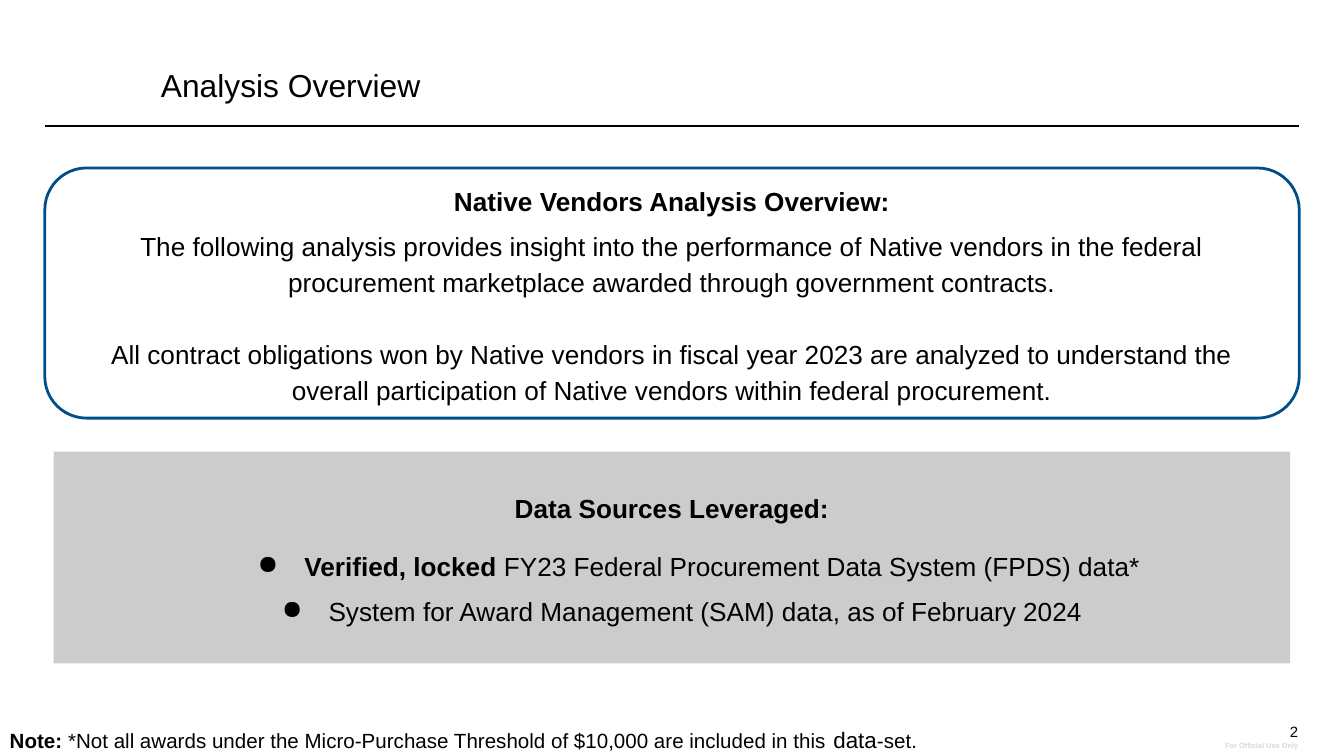
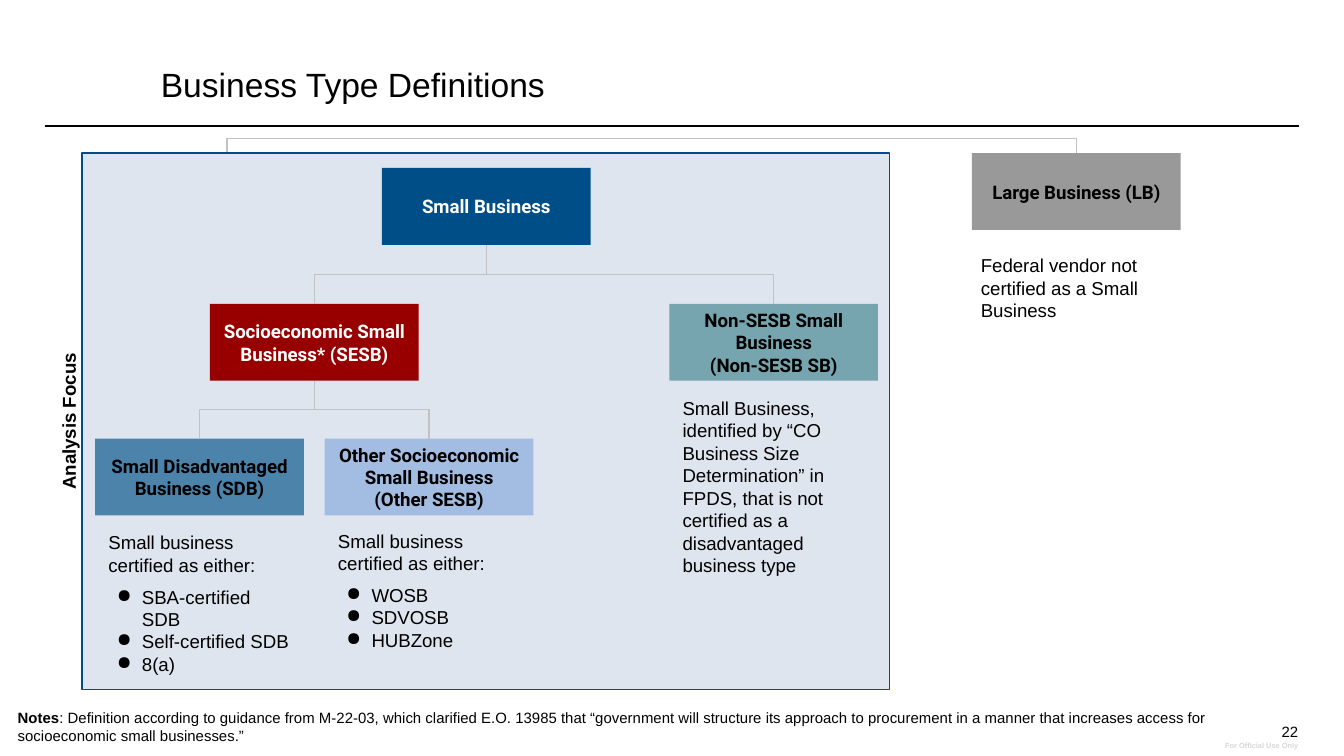
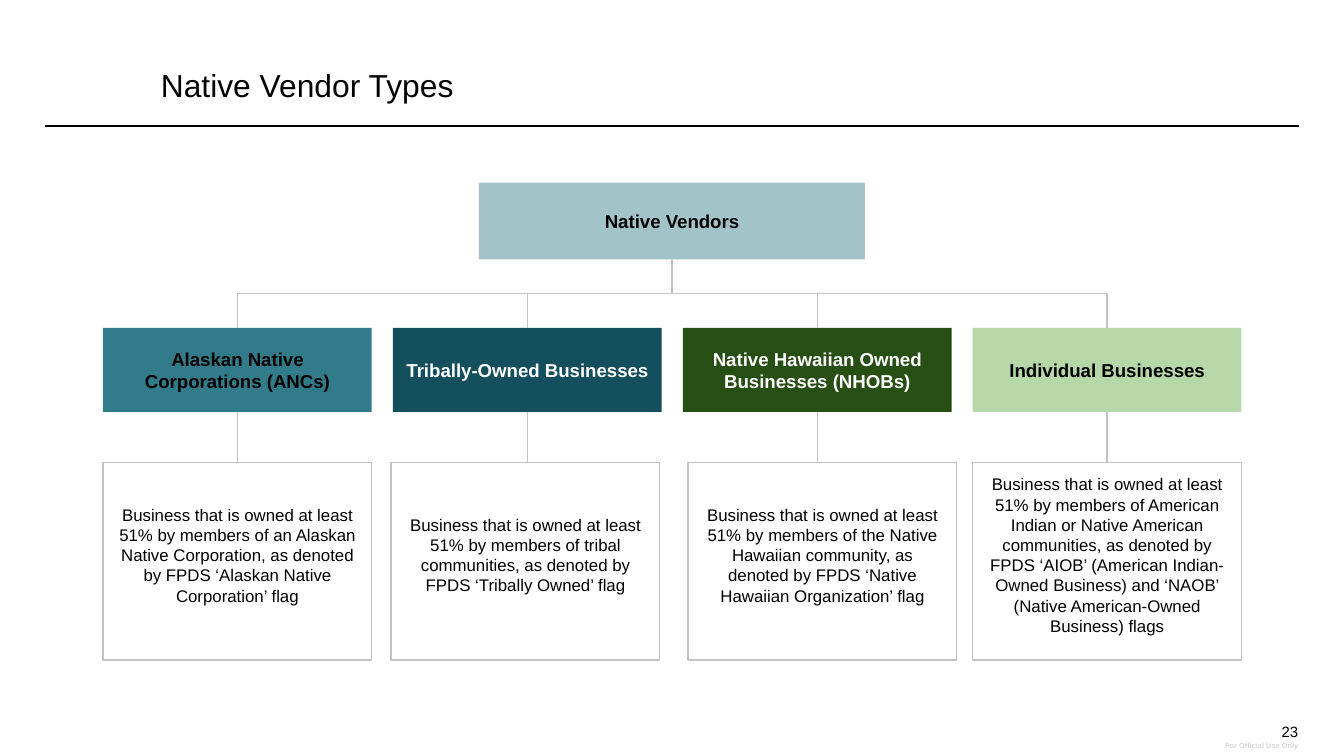
import lxml.etree
import pptx
import pptx.dml.color
import pptx.enum.shapes
import pptx.enum.text
import pptx.oxml.ns
import pptx.util

Pt = pptx.util.Pt
qn = pptx.oxml.ns.qn
SHAPE = pptx.enum.shapes.MSO_SHAPE
CONNECTOR = pptx.enum.shapes.MSO_CONNECTOR
ALIGN = pptx.enum.text.PP_ALIGN
ANCHOR = pptx.enum.text.MSO_ANCHOR

BLACK, WHITE = "000000", "FFFFFF"
NAVY, GRAY, PALE = "004E87", "C2C2C2", "D8D8D8"
NODE_WIDTH, NODE_HEIGHT = 111.8, 41.2


def color(value):
    """Turn a hex string into a colour."""
    return pptx.dml.color.RGBColor.from_string(value)


def line(*spans, before=0, hang=None):
    """Describe a paragraph: its spans, space before and bullet indents."""
    return {"spans": spans, "before": before, "hang": hang}


def bold(text):
    """Describe a bold span."""
    return text, {"bold": True}


class Deck:
    """Hold the shared style and the current slide."""

    def __init__(self):
        """Open an empty deck of the right size."""
        self.deck = pptx.Presentation()
        self.deck.slide_width, self.deck.slide_height = Pt(720), Pt(405)
        self.page = None

    def new_page(self, title, number, title_size=17, number_size=8):
        """Start a slide with its title, rule, number and footer."""
        self.page = self.deck.slides.add_slide(self.deck.slide_layouts[6])
        self.rule((24, 67.5), (696, 67.5), BLACK, 1.5)
        self.text((657, 387, 38.5, 16), [str(number)], size=number_size,
                  align=ALIGN.RIGHT, insets=(0, 0, 0, 0))
        self.text((644.5, 391, 51, 10.8), ["For Official Use Only"], size=4,
                  ink=PALE, strong=True, align=ALIGN.RIGHT,
                  anchor=ANCHOR.BOTTOM, insets=(0, 0, 0, 0))
        self.text((81, 13.5, 615, 45), [title], size=title_size, spacing=0.9,
                  anchor=ANCHOR.BOTTOM, insets=(5.2, 2.6, 5.2, 2.6))

    def fill_text(self, box, lines, size=10, ink=BLACK, font="Arial", strong=False,
                  align=ALIGN.LEFT, anchor=ANCHOR.TOP, spacing=None,
                  insets=(7.2, 7.2, 7.2, 7.2)):
        """Fill a box with paragraphs, run by run."""
        frame = box.text_frame
        frame.word_wrap = True
        frame.vertical_anchor = anchor
        (frame.margin_left, frame.margin_top,
         frame.margin_right, frame.margin_bottom) = map(Pt, insets)
        for index, item in enumerate(lines):
            entry = line(item) if isinstance(item, str) else item
            para = frame.add_paragraph() if index else frame.paragraphs[0]
            para.alignment = align
            if spacing:
                para.line_spacing = spacing
            if entry["before"]:
                para.space_before = Pt(entry["before"])
            if entry["hang"]:
                self.bullet(para, *entry["hang"])
            for piece in entry["spans"]:
                words, look = (piece, {}) if isinstance(piece, str) else piece
                span = para.add_run()
                span.text = words
                span.font.name = font
                span.font.size = Pt(look.get("size", size))
                span.font.bold = look.get("bold", strong)
                span.font.color.rgb = color(ink)

    def bullet(self, para, left, hanging):
        """Give a paragraph a round bullet with a hanging indent."""
        properties = para._p.get_or_add_pPr()
        properties.set("marL", str(Pt(left)))
        properties.set("indent", str(-Pt(hanging)))
        lxml.etree.SubElement(properties, qn("a:buChar")).set("char", "●")

    def text(self, area, lines, turn=0, **style):
        """Add a text box."""
        box = self.page.shapes.add_textbox(*map(Pt, area))
        box.rotation = turn
        self.fill_text(box, lines, **style)

    def block(self, area, fill=None, edge=None, edge_width=0.75, lines=(),
              kind=SHAPE.RECTANGLE, **style):
        """Add a filled or outlined shape with centred text."""
        box = self.page.shapes.add_shape(kind, *map(Pt, area))
        box.shadow.inherit = False
        if fill:
            box.fill.solid()
            box.fill.fore_color.rgb = color(fill)
        else:
            box.fill.background()
        if edge:
            box.line.color.rgb = color(edge)
            box.line.width = Pt(edge_width)
        else:
            box.line.fill.background()
        self.fill_text(box, lines, align=ALIGN.CENTER, anchor=ANCHOR.MIDDLE, **style)
        return box

    def node(self, left, top, fill, *lines, ink=BLACK):
        """Add a box of the business type tree."""
        return self.block((left, top, NODE_WIDTH, NODE_HEIGHT), fill,
                          lines=lines, ink=ink, font="Roboto", strong=True)

    def rule(self, start, end, ink=GRAY, width=0.75, kind=CONNECTOR.STRAIGHT):
        """Add a connector between two points."""
        link = self.page.shapes.add_connector(kind, *map(Pt, start + end))
        link.line.color.rgb = color(ink)
        link.line.width = Pt(width)
        lxml.etree.SubElement(link._element.spPr, qn("a:effectLst"))
        return link

    def branch(self, parent, child):
        """Link a parent to a child below it by a down-across-down elbow."""
        x1 = parent.left.pt + parent.width.pt / 2
        y1 = parent.top.pt + parent.height.pt
        x2 = child.left.pt + child.width.pt / 2
        y2 = child.top.pt
        x, y = (x1 + x2) / 2, (y1 + y2) / 2
        across, down = (x2 - x1) / 2, (y2 - y1) / 2
        link = self.rule((x - down, y + across), (x + down, y - across),
                         kind=CONNECTOR.ELBOW)
        link._element.spPr.find(qn("a:xfrm")).set("rot", "5400000")

    def drop(self, upper, lower):
        """Link a box straight down to the one below it."""
        x = upper.left.pt + upper.width.pt / 2
        self.rule((x, upper.top.pt + upper.height.pt), (x, lower.top.pt))


def overview(deck):
    """Build the analysis overview."""
    deck.new_page("Analysis Overview", 2)
    deck.block((24, 90, 672, 134), edge=NAVY, edge_width=1.5,
               kind=SHAPE.ROUNDED_RECTANGLE, size=14, spacing=1.15, lines=[
                   line(bold("Native Vendors Analysis Overview:")),
                   line("The following analysis provides insight into the performance of "
                        "Native vendors in the federal procurement marketplace awarded "
                        "through government contracts.", before=5),
                   line("All contract obligations won by Native vendors in fiscal year 2023 "
                        "are analyzed to understand the overall participation of Native "
                        "vendors within federal procurement.", before=19.3)])
    deck.block((28.8, 242, 662.4, 113.4), "CCCCCC", size=14, spacing=1.15, lines=[
        line(bold("Data Sources Leveraged:")),
        line(bold("Verified, locked "),
             "FY23 Federal Procurement Data System (FPDS) data*",
             before=11.5, hang=(54, 25)),
        line("System for Award Management (SAM) data, as of February 2024",
             before=5, hang=(36, 25))])
    deck.text((0, 368, 680, 37), [line(
        bold("Note:"),
        " *Not all awards under the Micro-Purchase Threshold of $10,000 are "
        "included in this",
        (" data", {"size": 12}), "-set.")],
        size=11, anchor=ANCHOR.BOTTOM, insets=(5.2, 5.2, 5.2, 1.5))


def business_types(deck):
    """Build the business type tree."""
    deck.new_page("Business Type Definitions", 22, title_size=18)
    left, right, low, high = 121.7, 576.6, 82, 74.2
    deck.rule((left, low), (left, high))
    deck.rule((left, high), (right, high))
    deck.rule((right, high), (right, low))
    deck.text((-107.3, 218.2, 288, 15.1), ["Analysis Focus"], turn=270,
              strong=True, align=ALIGN.CENTER, anchor=ANCHOR.MIDDLE,
              insets=(0, 0, 0, 0))
    deck.block((44, 82, 432.6, 287.3), "DFE5EF", NAVY)

    deck.node(520.7, 82, "999999", "Large Business (LB)")
    small = deck.node(204.6, 90, NAVY, "Small Business", ink=WHITE)
    social = deck.node(112.5, 162.8, "980000",
                       "Socioeconomic Small Business* (SESB)", ink=WHITE)
    other_small = deck.node(358.6, 162.8, "76A5AF",
                            "Non-SESB Small Business", "(Non-SESB SB)")
    disadvantaged = deck.node(51, 235, "4C83AB", "Small Disadvantaged Business (SDB)")
    other_social = deck.node(174, 235, "A3BDE2",
                             "Other Socioeconomic Small Business (Other SESB)")
    for parent, child in ((small, social), (small, other_small),
                          (social, disadvantaged), (social, other_social)):
        deck.branch(parent, child)

    definitions = (
        (518.4, 129, 51, "Federal vendor not certified as a Small Business", ()),
        (358.6, 205.4, 112,
         "Small Business, identified by “CO Business Size Determination” in FPDS, "
         "that is not certified as a disadvantaged business type", ()),
        (51, 277.4, 92, "Small business certified as either:",
         ("SBA-certified SDB", "Self-certified SDB", "8(a)")),
        (174, 276.4, 80, "Small business certified as either:",
         ("WOSB", "SDVOSB", "HUBZone")),
    )
    for left, top, height, words, kinds in definitions:
        points = [line(kind, before=0 if index else 5, hang=(18, 13.5))
                  for index, kind in enumerate(kinds)]
        deck.text((left, top, NODE_WIDTH, height), [words] + points)
    deck.text((4.3, 374.4, 668, 30.2), [line(
        bold("Notes"),
        ": Definition according to guidance from M-22-03, which clarified E.O. 13985 "
        "that “government will structure its approach to procurement in a manner that "
        "increases access for socioeconomic small businesses.”")],
        size=8, insets=(5.2, 5.2, 5.2, 5.2))


def vendor_types(deck):
    """Build the native vendor tree."""
    deck.new_page("Native Vendor Types", 23)
    root = deck.block((256.6, 97.8, 206.8, 41.2), "A2C4C9",
                      lines=["Native Vendors"], strong=True)
    owned = "Business that is owned at least 51% by members of "
    vendors = (
        ("Alaskan Native Corporations (ANCs)", "327B8B", BLACK, 0,
         "an Alaskan Native Corporation, as denoted by FPDS "
         "‘Alaskan Native Corporation’ flag"),
        ("Tribally-Owned Businesses", "134F5C", WHITE, -1,
         "tribal communities, as denoted by FPDS ‘Tribally Owned’ flag"),
        ("Native Hawaiian Owned Businesses (NHOBs)", "274E13", WHITE, 2.8,
         "the Native Hawaiian community, as denoted by FPDS "
         "‘Native Hawaiian Organization’ flag"),
        ("Individual Businesses", "B6D7A8", BLACK, 0,
         "American Indian or Native American communities, as denoted by FPDS "
         "‘AIOB’ (American Indian-Owned Business) and ‘NAOB’ "
         "(Native American-Owned Business) flags"),
    )
    for index, (name, fill, ink, shift, members) in enumerate(vendors):
        left = 55.2 + 155.3 * index
        vendor = deck.block((left, 175.7, 144, 45), fill, lines=[name],
                            ink=ink, strong=True)
        meaning = deck.block((left + shift, 247.8, 144, 105.8), WHITE, GRAY,
                             lines=[owned + members], size=9,
                             insets=(7.2, 7.2, 7.2, 14))
        deck.branch(root, vendor)
        deck.drop(vendor, meaning)


def main():
    """Build and save the deck."""
    deck = Deck()
    overview(deck)
    business_types(deck)
    vendor_types(deck)
    deck.deck.save("out.pptx")


if __name__ == "__main__":
    main()
